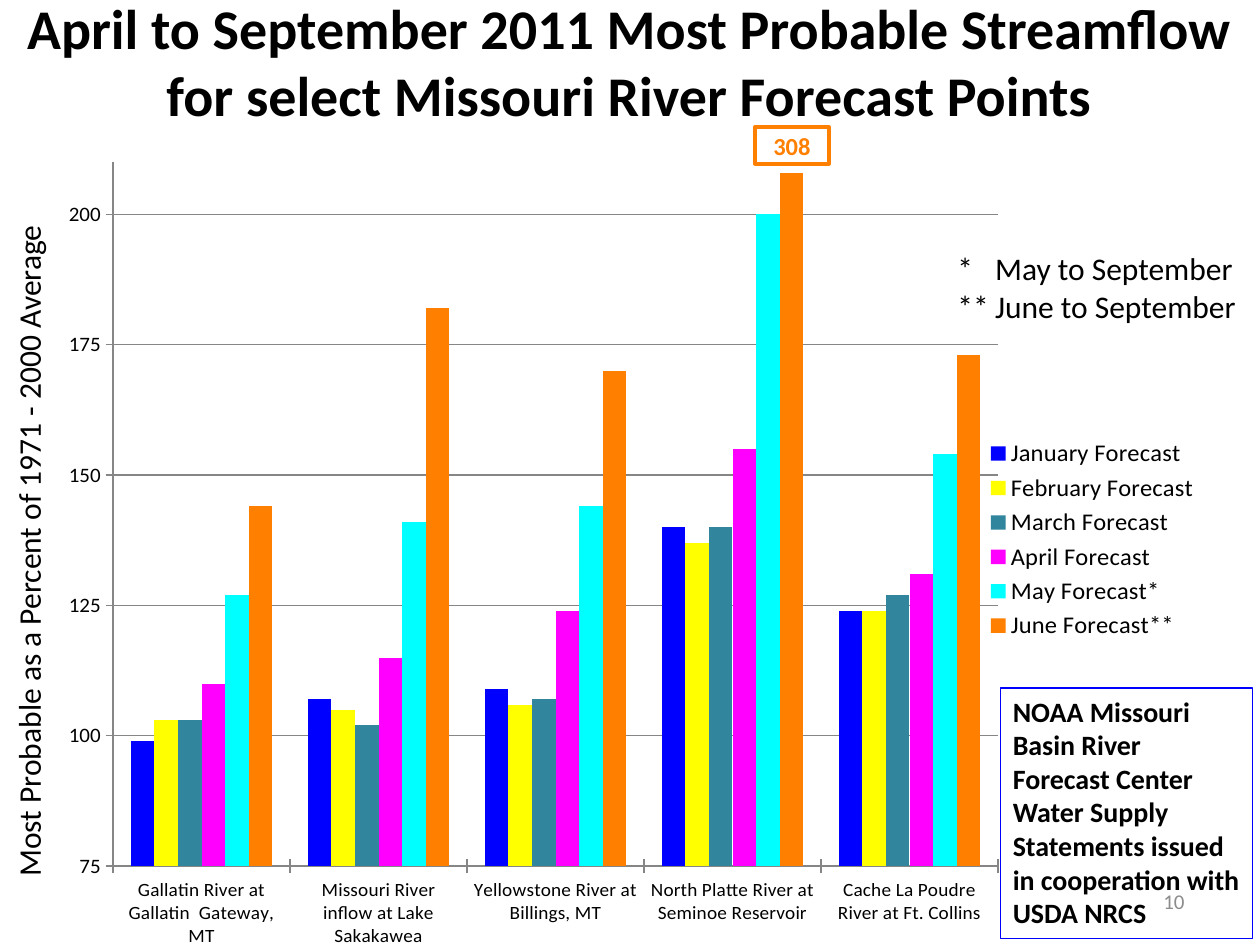
from lxml import etree
from pptx import Presentation
from pptx.chart.data import CategoryChartData
from pptx.dml.color import RGBColor
from pptx.enum import chart as ch, shapes, text
from pptx.oxml import ns
from pptx.util import Inches, Pt

TITLE = "April to September 2011 Most Probable Streamflow for select Missouri River Forecast Points"
AXIS_TITLE = "Most Probable as a Percent of 1971 - 2000 Average"
FOOTNOTES = ["*\tMay to September", "**\tJune to September"]
SOURCE_NOTE = ("NOAA Missouri Basin River Forecast Center Water Supply "
               "Statements issued in cooperation with USDA NRCS")

BLACK = RGBColor(0, 0, 0)
WHITE = RGBColor(255, 255, 255)
GRAY = RGBColor(0x8C, 0x8C, 0x8C)
RULE = RGBColor(0x86, 0x86, 0x86)
BLUE = RGBColor(0, 0, 255)
YELLOW = RGBColor(255, 255, 0)
TEAL = RGBColor(0x31, 0x85, 0x9C)
MAGENTA = RGBColor(255, 0, 255)
CYAN = RGBColor(0, 255, 255)
ORANGE = RGBColor(255, 0x80, 0)

POINTS = [
    "Gallatin River at Gallatin  Gateway, MT",
    "Missouri River inflow at Lake Sakakawea",
    "Yellowstone River at Billings, MT",
    "North Platte River at Seminoe Reservoir",
    "Cache La Poudre River at Ft. Collins",
]
FORECASTS = [
    ("January Forecast", BLUE, (99, 107, 109, 140, 124)),
    ("February Forecast", YELLOW, (103, 105, 106, 137, 124)),
    ("March Forecast", TEAL, (103, 102, 107, 140, 127)),
    ("April Forecast", MAGENTA, (110, 115, 124, 155, 131)),
    ("May Forecast*", CYAN, (127, 141, 144, 200, 154)),
    ("June Forecast**", ORANGE, (144, 182, 170, 208, 173)),
]
PLOT_AREA = {"x": 0.055, "y": 0.016, "w": 0.761, "h": 0.903}


def style(font, size, color=BLACK, bold=False):
    font.name, font.size, font.bold = "Calibri", Pt(size), bold
    font.color.rgb = color


def write(sp, lines, size, color=BLACK, bold=False, align=text.PP_ALIGN.LEFT,
          anchor=text.MSO_ANCHOR.TOP, wrap=True):
    tf = sp.text_frame
    tf.word_wrap = wrap
    tf.vertical_anchor = anchor
    tf.text = "\n".join(lines)
    for p in tf.paragraphs:
        p.alignment = align
        style(p.font, size, color, bold)


def add_text(s, box, lines, size, **options):
    sp = s.shapes.add_textbox(*map(Inches, box))
    write(sp, lines, size, **options)
    return sp


def add_box(s, box, line, width, fill=None):
    sp = s.shapes.add_shape(shapes.MSO_SHAPE.RECTANGLE, *map(Inches, box))
    sp.shadow.inherit = False
    if fill is None:
        sp.fill.background()
    else:
        sp.fill.solid()
        sp.fill.fore_color.rgb = fill
    sp.line.color.rgb = line
    sp.line.width = Pt(width)
    return sp


def place_plot_area(chart):
    """Fix the inner plot area as fractions of the chart frame."""
    area = chart.plots[0]._element.getparent()
    for old in area.findall(ns.qn("c:layout")):
        area.remove(old)
    layout = etree.Element(ns.qn("c:layout"))
    area.insert(0, layout)
    manual = etree.SubElement(layout, ns.qn("c:manualLayout"))
    settings = [("layoutTarget", "inner"), ("xMode", "edge"), ("yMode", "edge")]
    for tag, value in settings + list(PLOT_AREA.items()):
        etree.SubElement(manual, ns.qn("c:" + tag)).set("val", str(value))


def add_forecast_chart(s, box):
    data = CategoryChartData()
    data.categories = POINTS
    for name, _, values in FORECASTS:
        data.add_series(name, values)
    chart = s.shapes.add_chart(ch.XL_CHART_TYPE.COLUMN_CLUSTERED,
                               *map(Inches, box), data).chart
    style(chart.font, 10)
    chart.has_title = False
    plot = chart.plots[0]
    plot.gap_width, plot.overlap, plot.vary_by_categories = 150, 0, False
    for series, (_, color, _) in zip(plot.series, FORECASTS):
        series.format.fill.solid()
        series.format.fill.fore_color.rgb = color

    cat, val = chart.category_axis, chart.value_axis
    val.minimum_scale, val.maximum_scale, val.major_unit = 75, 210, 25
    val.has_major_gridlines = True
    cat.major_tick_mark = ch.XL_TICK_MARK.CROSS
    val.major_tick_mark = ch.XL_TICK_MARK.OUTSIDE
    for axis, size in ((cat, 11), (val, 12)):
        style(axis.tick_labels.font, size)
    for line in (cat.format.line, val.format.line, val.major_gridlines.format.line):
        line.color.rgb = RULE
        line.width = Pt(0.75)

    chart.has_legend = True
    chart.legend.position = ch.XL_LEGEND_POSITION.RIGHT
    chart.legend.include_in_layout = False
    style(chart.legend.font, 14)
    place_plot_area(chart)


def main():
    prs = Presentation()
    prs.slide_width, prs.slide_height = Inches(10), Inches(7.5)
    s = prs.slides.add_slide(prs.slide_layouts[5])
    middle, center = text.MSO_ANCHOR.MIDDLE, text.PP_ALIGN.CENTER

    title = s.shapes.title
    title.left, title.top, title.width, title.height = map(Inches, (0.07, 0, 9.85, 0.96))
    write(title, [TITLE], 32, bold=True, align=center, anchor=middle)
    title.text_frame.auto_size = text.MSO_AUTO_SIZE.NONE

    add_forecast_chart(s, (0.39, 1.19, 9.23, 6.33))

    off_scale = add_box(s, (5.99, 1.01, 0.59, 0.29), ORANGE, 2, WHITE)
    write(off_scale, ["308"], 14, ORANGE, True, center, middle, wrap=False)

    axis_title = add_text(s, (-2.5, 4.13, 5.45, 0.4), [AXIS_TITLE], 18, wrap=False)
    axis_title.rotation = 270

    footnotes = add_text(s, (7.5, 1.93, 2.47, 0.71), FOOTNOTES, 18, wrap=False)
    for p in footnotes.text_frame.paragraphs:
        pPr = p._p.get_or_add_pPr()
        pPr.set("marL", str(Inches(0.3)))
        pPr.set("indent", str(-Inches(0.3)))

    source = add_box(s, (7.94, 5.46, 2, 1.99), BLUE, 0.75)
    write(source, [SOURCE_NOTE], 16, bold=True)

    add_text(s, (7.17, 6.95, 2.33, 0.4), ["10"], 12, color=GRAY,
             align=text.PP_ALIGN.RIGHT, anchor=middle)
    prs.save("out.pptx")


if __name__ == "__main__":
    main()
